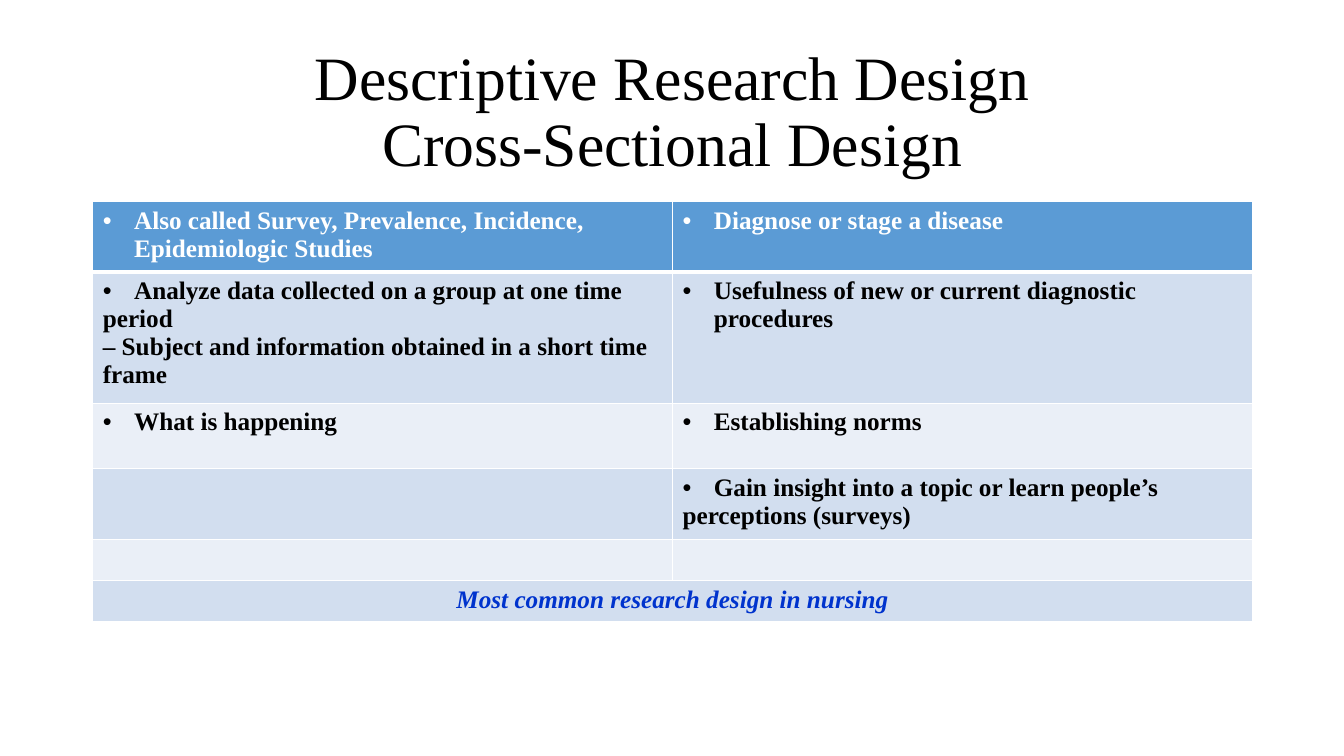
from pptx import Presentation
from pptx.dml.color import RGBColor
from pptx.enum.text import MSO_ANCHOR, PP_ALIGN
from pptx.oxml.ns import qn
from pptx.util import Inches, Pt
from lxml.etree import SubElement

FONT = "Times New Roman"
TITLE = ["Descriptive Research Design", "Cross-Sectional Design"]
ROWS = [
    (["• Also called Survey, Prevalence, Incidence, Epidemiologic Studies"],
     ["• Diagnose or stage a disease"]),
    (["• Analyze data collected on a group at one time", "period",
      "– Subject and information obtained in a short time", "frame"],
     ["• Usefulness of new or current diagnostic procedures"]),
    (["• What is happening"], ["• Establishing norms"]),
    ([], ["• Gain insight into a topic or learn people’s", "perceptions (surveys)"]),
    ([], []),
    (["Most common research design in nursing"], []),
]
HEIGHTS = [0.65, 1.21, 0.65, 0.65, 0.41, 0.41]
LEFT, WIDTH = 0.92, 11.5
HEADER, BANDS = "5B9BD5", ["EAEFF7", "D2DEEF"]
WHITE, BLACK, BLUE = "FFFFFF", "000000", "0033CD"


def rgb(value):
    return RGBColor.from_string(value)


def add_run(p, text, size, color, bold=False, italic=False):
    r = p.add_run()
    r.text = text
    r.font.name = FONT
    r.font.size = Pt(size)
    r.font.bold = bold
    r.font.italic = italic
    r.font.color.rgb = rgb(color)


def add_bullet(p):
    pPr = p._p.get_or_add_pPr()
    pPr.set("marL", str(Inches(0.31)))
    pPr.set("indent", str(Inches(-0.31)))
    SubElement(pPr, qn("a:buFont")).set("typeface", "Arial")
    SubElement(pPr, qn("a:buChar")).set("char", "•")


def add_border(cell, side, width):
    ln = SubElement(cell._tc.get_or_add_tcPr(), qn("a:ln" + side), w=str(Pt(width)))
    fill = SubElement(ln, qn("a:solidFill"))
    SubElement(fill, qn("a:srgbClr")).set("val", WHITE)


def fill_cell(cell, row, lines):
    widths = {"L": 1, "R": 1, "T": 3 if row == 1 else 1, "B": 3 if row == 0 else 1}
    for side, width in widths.items():
        add_border(cell, side, width)
    cell.fill.solid()
    cell.fill.fore_color.rgb = rgb(HEADER if row == 0 else BANDS[row % 2])
    last = row == len(ROWS) - 1
    color = WHITE if row == 0 else BLUE if last else BLACK
    tf = cell.text_frame
    for i, line in enumerate(lines):
        p = tf.add_paragraph() if i else tf.paragraphs[0]
        if last:
            p.alignment = PP_ALIGN.CENTER
        if line.startswith("• "):
            add_bullet(p)
        add_run(p, line.removeprefix("• "), 18, color, bold=True, italic=last)


prs = Presentation()
prs.slide_width, prs.slide_height = Inches(13.33), Inches(7.5)
s = prs.slides.add_slide(prs.slide_layouts[6])

title = s.shapes.add_textbox(Inches(LEFT), Inches(0.4), Inches(WIDTH), Inches(1.45))
tf = title.text_frame
tf.word_wrap = True
tf.vertical_anchor = MSO_ANCHOR.MIDDLE
p = tf.paragraphs[0]
p.alignment = PP_ALIGN.CENTER
p.line_spacing = 0.9
for i, line in enumerate(TITLE):
    if i:
        p.add_line_break()
    add_run(p, line, 44, BLACK)

table = s.shapes.add_table(len(ROWS), 2, Inches(LEFT), Inches(2),
                           Inches(WIDTH), Inches(sum(HEIGHTS))).table
for column in table.columns:
    column.width = Inches(WIDTH / 2)
for row, (height, cells) in enumerate(zip(HEIGHTS, ROWS)):
    table.rows[row].height = Inches(height)
    for col, lines in enumerate(cells):
        fill_cell(table.cell(row, col), row, lines)
table.cell(len(ROWS) - 1, 0).merge(table.cell(len(ROWS) - 1, 1))

prs.save("out.pptx")
